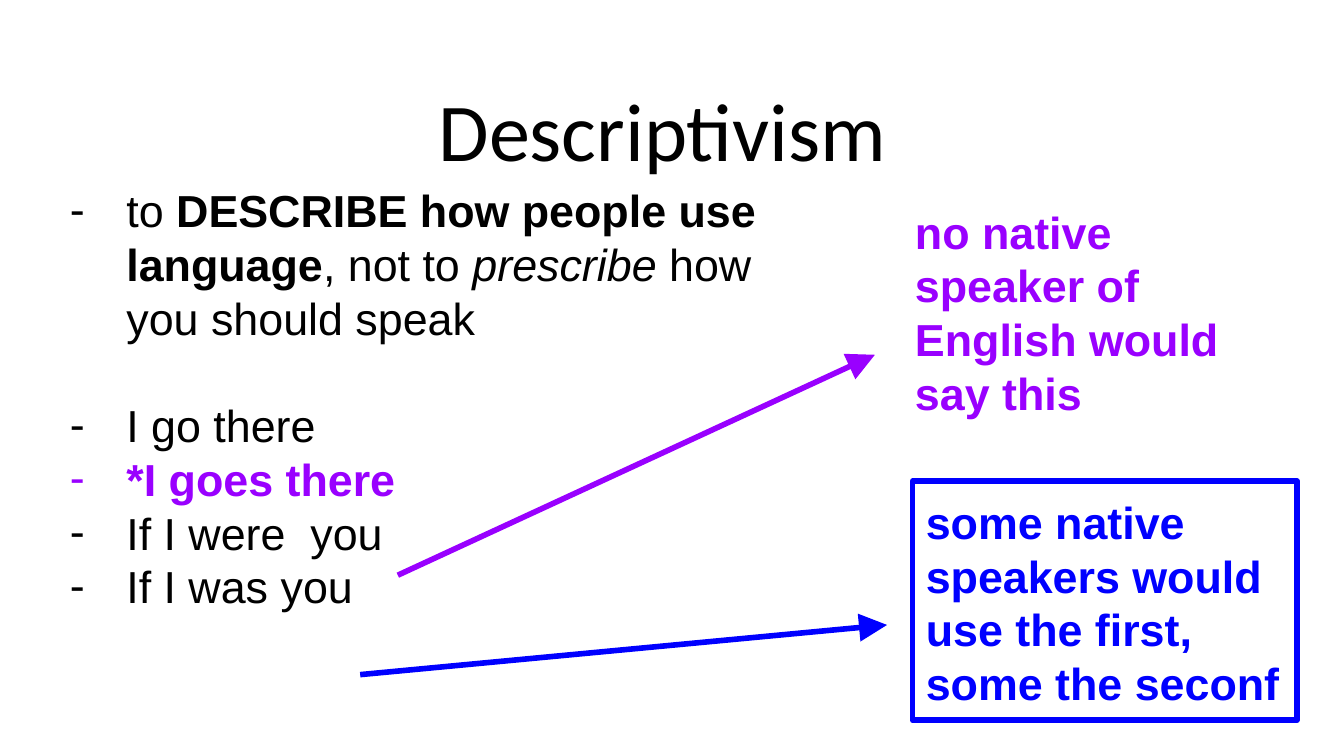
import pptx
import pptx.util
import pptx.dml.color
import pptx.enum.shapes
import pptx.enum.text
import pptx.oxml.ns
from lxml import etree

Inches = pptx.util.Inches
Pt = pptx.util.Pt
RGBColor = pptx.dml.color.RGBColor
qn = pptx.oxml.ns.qn

BLACK = RGBColor(0x00, 0x00, 0x00)
PURPLE = RGBColor(0x99, 0x00, 0xFF)
BLUE = RGBColor(0x00, 0x00, 0xFF)


def prepare_box(box, left, top, width, height):
    box.left, box.top = Inches(left), Inches(top)
    box.width, box.height = Inches(width), Inches(height)
    frame = box.text_frame
    frame.word_wrap = True
    frame.auto_size = pptx.enum.text.MSO_AUTO_SIZE.NONE
    frame.vertical_anchor = pptx.enum.text.MSO_ANCHOR.TOP
    frame.margin_left = frame.margin_right = Inches(0.1)
    frame.margin_top = frame.margin_bottom = Inches(0.1)
    return frame


def add_text(paragraph, text, color, bold=False, italic=False, size=24, face="Arial"):
    paragraph.line_spacing = 1.0
    run = paragraph.add_run()
    run.text = text
    run.font.name = face
    run.font.size = Pt(size)
    run.font.bold = bold
    run.font.italic = italic
    run.font.color.rgb = color


presentation = pptx.Presentation()
presentation.slide_width = Inches(10)
presentation.slide_height = Inches(10) * 9 // 16
slide = presentation.slides.add_slide(presentation.slide_layouts[1])

heading = prepare_box(slide.shapes.title, 0.34, 0.49, 9.32, 0.68).paragraphs[0]
heading.alignment = pptx.enum.text.PP_ALIGN.CENTER
add_text(heading, "Descriptivism ", BLACK, size=44, face="Calibri")

points = [
    (0, BLACK, [
        ("to ", False, False),
        ("DESCRIBE how people use language", True, False),
        (", not to ", False, False),
        ("prescribe ", False, True),
        ("how you should speak", False, False),
    ]),
    (28.8, BLACK, [("I go there", False, False)]),
    (0, PURPLE, [("*I goes there", True, False)]),
    (0, BLACK, [("If I were  you", False, False)]),
    (0, BLACK, [("If I was you", False, False)]),
]
point_list = prepare_box(slide.placeholders[1], 0.34, 1.26, 5.94, 4.25)
for index, (gap, color, pieces) in enumerate(points):
    point = point_list.add_paragraph() if index else point_list.paragraphs[0]
    properties = point._p.get_or_add_pPr()
    properties.set("marL", str(Inches(0.5)))
    properties.set("indent", str(Inches(-0.42)))
    bullet_color = etree.SubElement(properties, qn("a:buClr"))
    etree.SubElement(bullet_color, qn("a:srgbClr"), val=str(color))
    etree.SubElement(properties, qn("a:buFont"), typeface="Arial")
    etree.SubElement(properties, qn("a:buChar"), char="-")
    point.space_before = Pt(gap)
    for text, bold, italic in pieces:
        add_text(point, text, color, bold, italic)

nobody_note = slide.shapes.add_textbox(0, 0, 0, 0)
nobody_frame = prepare_box(nobody_note, 6.71, 1.42, 2.86, 1.86)
add_text(nobody_frame.paragraphs[0], "no native speaker of English would say this", PURPLE, bold=True)

some_note = slide.shapes.add_shape(pptx.enum.shapes.MSO_SHAPE.RECTANGLE, 0, 0, 0, 0)
some_note.shadow.inherit = False
some_note.fill.background()
some_note.line.color.rgb = BLUE
some_note.line.width = Pt(3)
some_line = prepare_box(some_note, 6.79, 3.58, 2.86, 1.78).paragraphs[0]
some_line.alignment = pptx.enum.text.PP_ALIGN.LEFT
add_text(some_line, "some native speakers would use the first, some the seconf", BLUE, bold=True)

arrows = [
    (2.96, 4.28, 6.51, 2.64, PURPLE),
    (2.68, 5.02, 6.6, 4.65, BLUE),
]
for start_x, start_y, end_x, end_y, color in arrows:
    arrow = slide.shapes.add_connector(
        pptx.enum.shapes.MSO_CONNECTOR.STRAIGHT,
        Inches(start_x), Inches(start_y), Inches(end_x), Inches(end_y))
    arrow.line.color.rgb = color
    arrow.line.width = Pt(3)
    etree.SubElement(arrow.line._get_or_add_ln(), qn("a:tailEnd"),
                     type="triangle", w="lg", len="lg")
    etree.SubElement(arrow._element.spPr, qn("a:effectLst"))

presentation.save("out.pptx")
